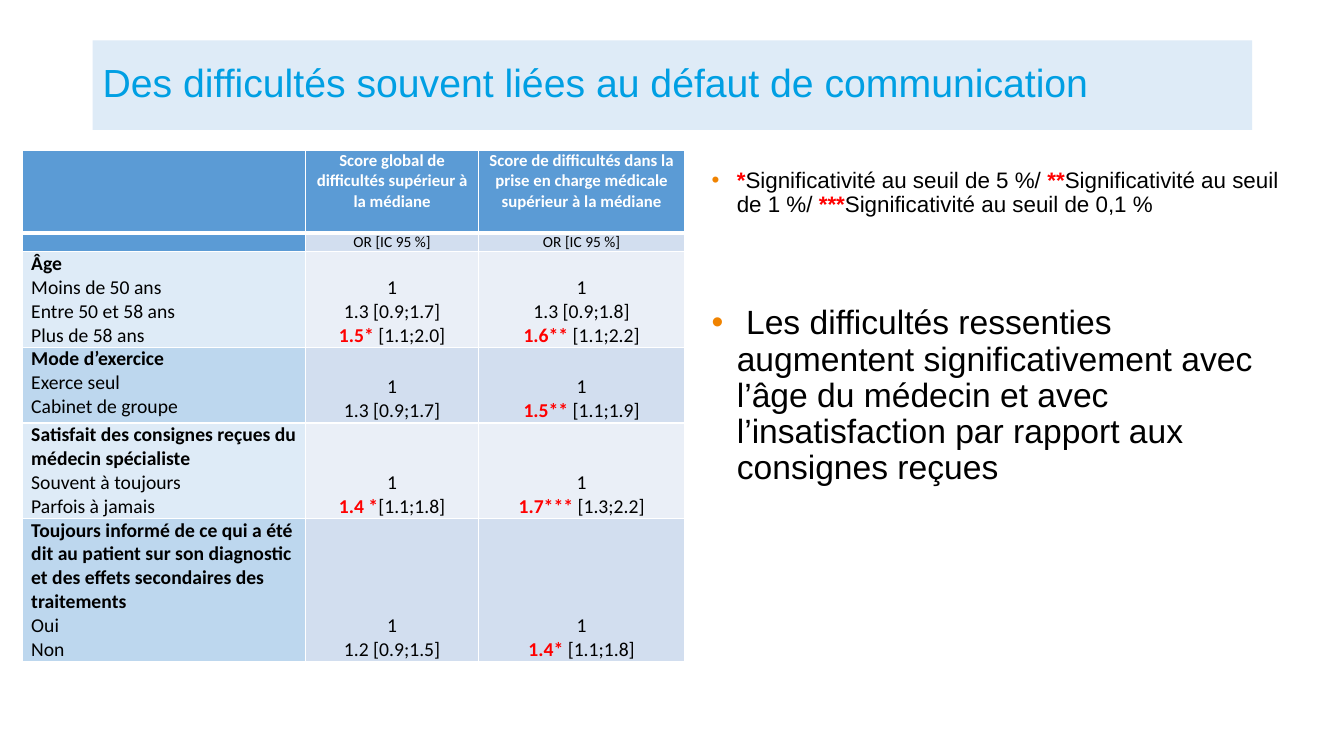
import pptx
import pptx.dml.color
import pptx.enum.shapes
import pptx.enum.text
import pptx.oxml
import pptx.oxml.ns
import pptx.util
from lxml import etree

ANCHOR = pptx.enum.text.MSO_ANCHOR
ALIGN = pptx.enum.text.PP_ALIGN
BLACK, WHITE, RED, ORANGE, CYAN = "000000", "FFFFFF", "FF0000", "F08300", "009FE3"
HEADER, PALE, MEDIUM = "5B9BD5", "DEEBF7", "BDD7EE"
VALUE_PALE, VALUE_MEDIUM = "EAEFF7", "D2DEEF"


def rgb(value):
    return pptx.dml.color.RGBColor.from_string(value)


def sub(parent, tag, **attributes):
    return etree.SubElement(parent, pptx.oxml.ns.qn(tag), attributes)


class SlideBuilder:
    heading_font = "Arial"
    table_font = "Calibri"

    def __init__(self, prs):
        self.width, self.height = prs.slide_width, prs.slide_height
        self.s = prs.slides.add_slide(prs.slide_layouts[6])

    def x(self, percent):
        return int(self.width * percent / 100)

    def y(self, percent):
        return int(self.height * percent / 100)

    def box(self, left, top, width, height):
        return self.x(left), self.y(top), self.x(width), self.y(height)

    def add_run(self, p, text, size, font, color=BLACK, bold=False):
        r = p.add_run()
        r.text = text
        r.font.size = pptx.util.Pt(size)
        r.font.name = font
        r.font.bold = bold
        r.font.color.rgb = rgb(color)

    def title(self, text, *place):
        sp = self.s.shapes.add_shape(
            pptx.enum.shapes.MSO_SHAPE.RECTANGLE, *self.box(*place))
        sp.shadow.inherit = False
        sp.fill.solid()
        sp.fill.fore_color.rgb = rgb(PALE)
        sp.line.fill.background()
        tf = sp.text_frame
        tf.word_wrap = True
        tf.vertical_anchor = ANCHOR.MIDDLE
        p = tf.paragraphs[0]
        p.alignment = ALIGN.LEFT
        p.line_spacing = 0.9
        self.add_run(p, text, 28, self.heading_font, CYAN)

    def bullets(self, items, gap, *place):
        tf = self.s.shapes.add_textbox(*self.box(*place)).text_frame
        tf.word_wrap = True
        for index, (size, runs) in enumerate(items):
            p = tf.add_paragraph() if index else tf.paragraphs[0]
            p.line_spacing = 0.9
            if index:
                p.space_before = pptx.util.Pt(gap)
            pPr = p._p.get_or_add_pPr()
            indent = pptx.util.Inches(0.25)
            pPr.set("marL", str(indent))
            pPr.set("indent", str(-indent))
            sub(sub(pPr, "a:buClr"), "a:srgbClr", val=ORANGE)
            sub(pPr, "a:buFont", typeface=self.heading_font)
            sub(pPr, "a:buChar", char="•")
            for text, color in runs:
                self.add_run(p, text, size, self.heading_font, color, color == RED)

    def table(self, left, top, columns, rows):
        place = self.box(left, top, sum(columns), sum(rows))
        table = self.s.shapes.add_table(len(rows), len(columns), *place).table
        for column, width in zip(table.columns, columns):
            column.width = self.x(width)
        for row, height in zip(table.rows, rows):
            row.height = self.y(height)
        return table

    def cell(self, cell, fill, lines, size, align=ALIGN.LEFT,
             anchor=ANCHOR.TOP, bottom_border=1):
        cell.margin_left = cell.margin_right = pptx.util.Inches(0.09)
        cell.margin_top = cell.margin_bottom = 0
        cell.vertical_anchor = anchor
        tcPr = cell._tc.get_or_add_tcPr()
        for side, points in zip("LRTB", (1, 1, 1, bottom_border)):
            ln = sub(tcPr, f"a:ln{side}", w=str(pptx.util.Pt(points)))
            sub(sub(ln, "a:solidFill"), "a:srgbClr", val=WHITE)
        cell.fill.solid()
        cell.fill.fore_color.rgb = rgb(fill)
        tf = cell.text_frame
        if not lines:
            sub(tf.paragraphs[0]._p, "a:endParaRPr", sz=str(size * 100))
        for index, runs in enumerate(lines):
            p = tf.add_paragraph() if index else tf.paragraphs[0]
            p.alignment = align
            for text, color, bold in runs:
                self.add_run(p, text, size, self.table_font, color, bold)


def value_line(text, marked=""):
    runs = [(marked, RED, True)] if marked else []
    return runs + [(text, BLACK, False)]


HEADINGS = [
    "",
    "Score global de difficultés supérieur à la médiane",
    "Score de difficultés dans la prise en charge médicale supérieur à la médiane",
]
UNITS = ["", "OR [IC 95 %]", "OR [IC 95 %]"]
GROUPS = [
    (["Âge", "Moins de 50 ans", "Entre 50 et 58 ans", "Plus de 58 ans"],
     [("1",), ("1.3 [0.9;1.7]",), ("[1.1;2.0]", "1.5* ")],
     [("1",), ("1.3 [0.9;1.8]",), ("[1.1;2.2]", "1.6** ")]),
    (["Mode d’exercice", "Exerce seul", "Cabinet de groupe"],
     [("1",), ("1.3 [0.9;1.7]",)],
     [("1",), ("[1.1;1.9]", "1.5** ")]),
    (["Satisfait des consignes reçues du médecin spécialiste",
      "Souvent à toujours", "Parfois à jamais"],
     [("1",), ("[1.1;1.8]", "1.4 *")],
     [("1",), ("[1.3;2.2]", "1.7*** ")]),
    (["Toujours informé de ce qui a été dit au patient sur son diagnostic "
      "et des effets secondaires des traitements", "Oui", "Non"],
     [("1",), ("1.2 [0.9;1.5]",)],
     [("1",), ("[1.1;1.8]", "1.4* ")]),
]
NOTES = [
    (16, [("*", RED), ("Significativité au seuil de 5 %/ ", BLACK),
          ("**", RED), ("Significativité au seuil de 1 %/ ", BLACK),
          ("***", RED), ("Significativité au seuil de 0,1 %", BLACK)]),
    (24, [(" Les difficultés ressenties augmentent significativement avec l’âge "
           "du médecin et avec l’insatisfaction par rapport aux consignes reçues",
           BLACK)]),
]


def main():
    prs = pptx.Presentation()
    prs.slide_width = pptx.util.Inches(13.33)
    prs.slide_height = pptx.util.Inches(7.5)
    slide = SlideBuilder(prs)
    slide.title("Des difficultés souvent liées au défaut de communication",
                6.9, 5.33, 86.27, 11.87)

    table = slide.table(1.65, 19.87, [21.08, 12.9, 15.3],
                        [10.93, 2.4, 12.4, 10, 12.4, 18.93])
    for column, (heading, unit) in enumerate(zip(HEADINGS, UNITS)):
        slide.cell(table.cell(0, column), HEADER,
                   [[(heading, WHITE, True)]] if heading else [],
                   12, ALIGN.CENTER, bottom_border=3)
        slide.cell(table.cell(1, column), VALUE_MEDIUM if unit else HEADER,
                   [value_line(unit)] if unit else [], 11, ALIGN.CENTER)
    for index, (labels, *scores) in enumerate(GROUPS):
        row = index + 2
        label_fill, value_fill = [(PALE, VALUE_PALE), (MEDIUM, VALUE_MEDIUM)][index % 2]
        slide.cell(table.cell(row, 0), label_fill,
                   [[(label, BLACK, place == 0)] for place, label in enumerate(labels)], 14)
        for column, values in enumerate(scores, 1):
            slide.cell(table.cell(row, column), value_fill,
                       [value_line(*value) for value in values],
                       14, ALIGN.CENTER, ANCHOR.BOTTOM)

    slide.bullets(NOTES, 63, 52.21, 21.73, 44.79, 59.47)
    prs.save("out.pptx")


if __name__ == "__main__":
    main()
